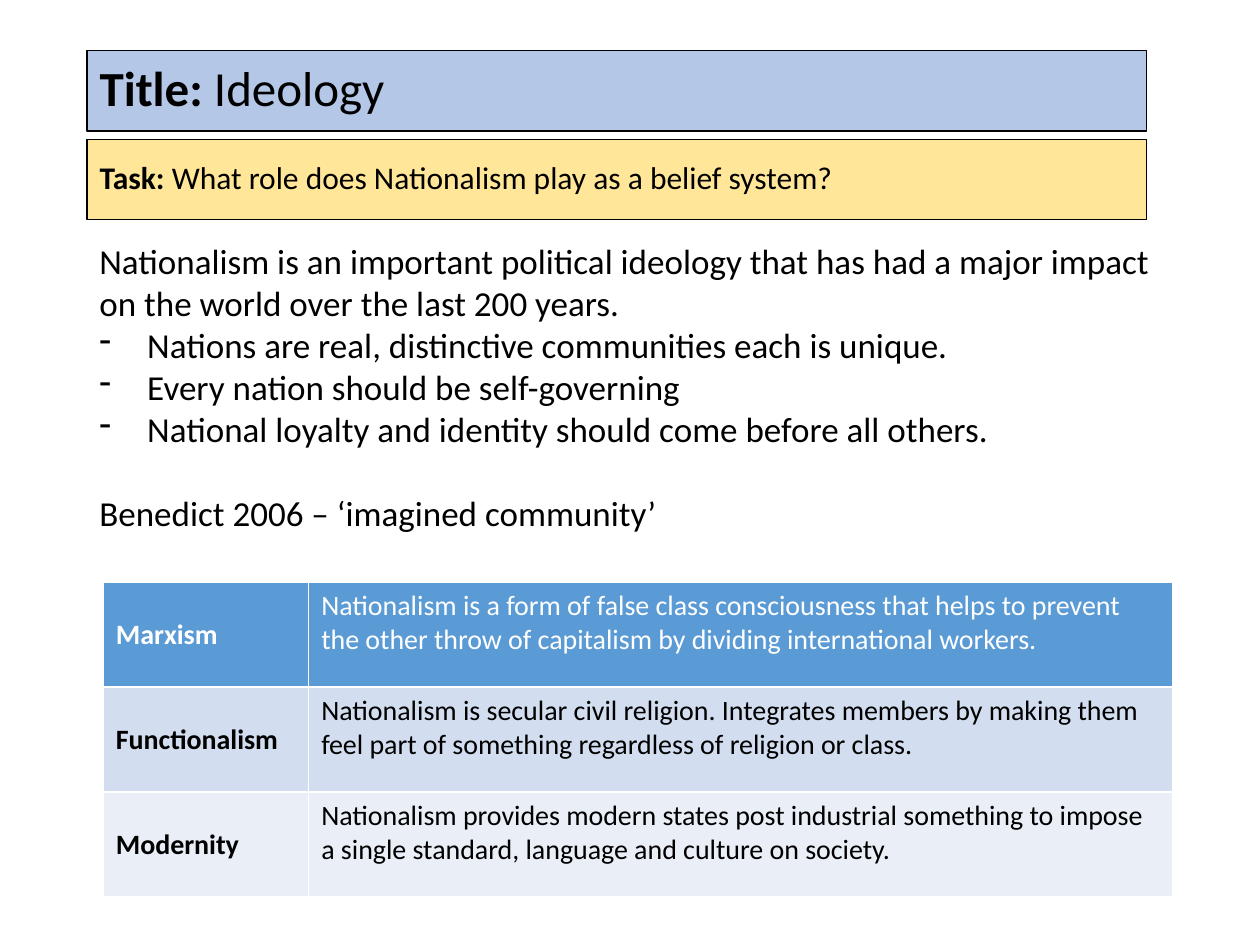
from lxml.etree import SubElement
from pptx import Presentation
from pptx.dml.color import RGBColor
from pptx.enum.text import MSO_ANCHOR as Anchor, MSO_AUTO_SIZE as AutoSize, PP_ALIGN as Align
from pptx.oxml.ns import qn
from pptx.util import Inches, Pt

COLORS = {
    "black": "000000",
    "white": "FFFFFF",
    "title": "B4C7E7",
    "task": "FFE699",
    "header": "5B9BD5",
    "band_dark": "D2DEEF",
    "band_light": "EAEFF7",
}
FONT = "Calibri"
POINTS = [
    "Nations are real, distinctive communities each is unique.",
    "Every nation should be self-governing",
    "National loyalty and identity should come before all others.",
]
VIEWS = [
    ("Marxism", "Nationalism is a form of false class consciousness that helps to prevent "
                "the other throw of capitalism by dividing international workers."),
    ("Functionalism", "Nationalism is secular civil religion. Integrates members by making them "
                      "feel part of something regardless of religion or class."),
    ("Modernity", "Nationalism provides modern states post industrial something to impose "
                  "a single standard, language and culture on society."),
]


def rgb(name):
    """Return the named colour."""
    return RGBColor.from_string(COLORS[name])


def write(paragraph, *parts, size, color="black", before=0, spacing=1.0, bullet=None):
    """Fill a paragraph with (text, bold) parts and format it."""
    paragraph.alignment = Align.LEFT
    paragraph.space_before = Pt(before)
    paragraph.line_spacing = spacing
    for text, bold in parts:
        run = paragraph.add_run()
        run.text = text
        run.font.name = FONT
        run.font.size = Pt(size)
        run.font.bold = bold
        run.font.color.rgb = rgb(color)
    properties = paragraph._p.get_or_add_pPr()
    indent = Inches(0.38) if bullet else 0
    properties.set("marL", str(indent))
    properties.set("indent", str(-indent))
    if bullet:
        SubElement(properties, qn("a:buChar"), char=bullet)
    else:
        SubElement(properties, qn("a:buNone"))


def place(shape, box):
    """Move a shape to a left, top, width, height box in inches."""
    shape.left, shape.top, shape.width, shape.height = map(Inches, box)


def fill_banner(shape, box, label, text, fill, **style):
    """Turn a placeholder into an outlined banner with a bold label."""
    place(shape, box)
    shape.fill.solid()
    shape.fill.fore_color.rgb = rgb(fill)
    shape.line.color.rgb = rgb("black")
    shape.line.width = Pt(0.75)
    frame = shape.text_frame
    frame.auto_size = AutoSize.NONE
    frame.vertical_anchor = Anchor.MIDDLE
    write(frame.paragraphs[0], (label, True), (text, False), spacing=0.9, **style)


def add_summary(slide, box):
    """Add the introduction, its dashed points and the closing reference."""
    frame = slide.shapes.add_textbox(*map(Inches, box)).text_frame
    frame.word_wrap = True
    intro = ("Nationalism is an important political ideology that has had a major impact "
             "on the world over the last 200 years.")
    write(frame.paragraphs[0], (intro, False), size=20)
    for point in POINTS:
        write(frame.add_paragraph(), (point, False), size=20, bullet="-")
    write(frame.add_paragraph(), ("Benedict 2006 – ‘imagined community’", False),
          size=20, before=24)


def add_views_table(slide, box, label_width):
    """Add the table of perspectives, one row for each view."""
    table = slide.shapes.add_table(len(VIEWS), 2, *map(Inches, box)).table
    table.columns[0].width = Inches(label_width)
    table.columns[1].width = Inches(box[2] - label_width)
    fills = ["header", "band_dark", "band_light"]
    for row, (view, fill) in enumerate(zip(VIEWS, fills)):
        for column, text in enumerate(view):
            cell = table.cell(row, column)
            cell.fill.solid()
            cell.fill.fore_color.rgb = rgb(fill)
            cell.vertical_anchor = Anchor.TOP if column else Anchor.MIDDLE
            write(cell.text_frame.paragraphs[0], (text, column == 0), size=16,
                  color="black" if row else "white")


def main():
    """Build and save the slide."""
    presentation = Presentation()
    presentation.slide_width, presentation.slide_height = Inches(10), Inches(7.5)
    slide = presentation.slides.add_slide(presentation.slide_layouts[1])
    fill_banner(slide.shapes.title, (0.69, 0.4, 8.41, 0.64),
                "Title: ", "Ideology", "title", size=28)
    fill_banner(slide.placeholders[1], (0.69, 1.11, 8.41, 0.63), "Task: ",
                "What role does Nationalism play as a belief system?", "task",
                size=18, before=10)
    add_summary(slide, (0.69, 1.85, 8.62, 3.13))
    add_views_table(slide, (0.82, 4.62, 8.49, 2.5), 1.63)
    presentation.save("out.pptx")


if __name__ == "__main__":
    main()
